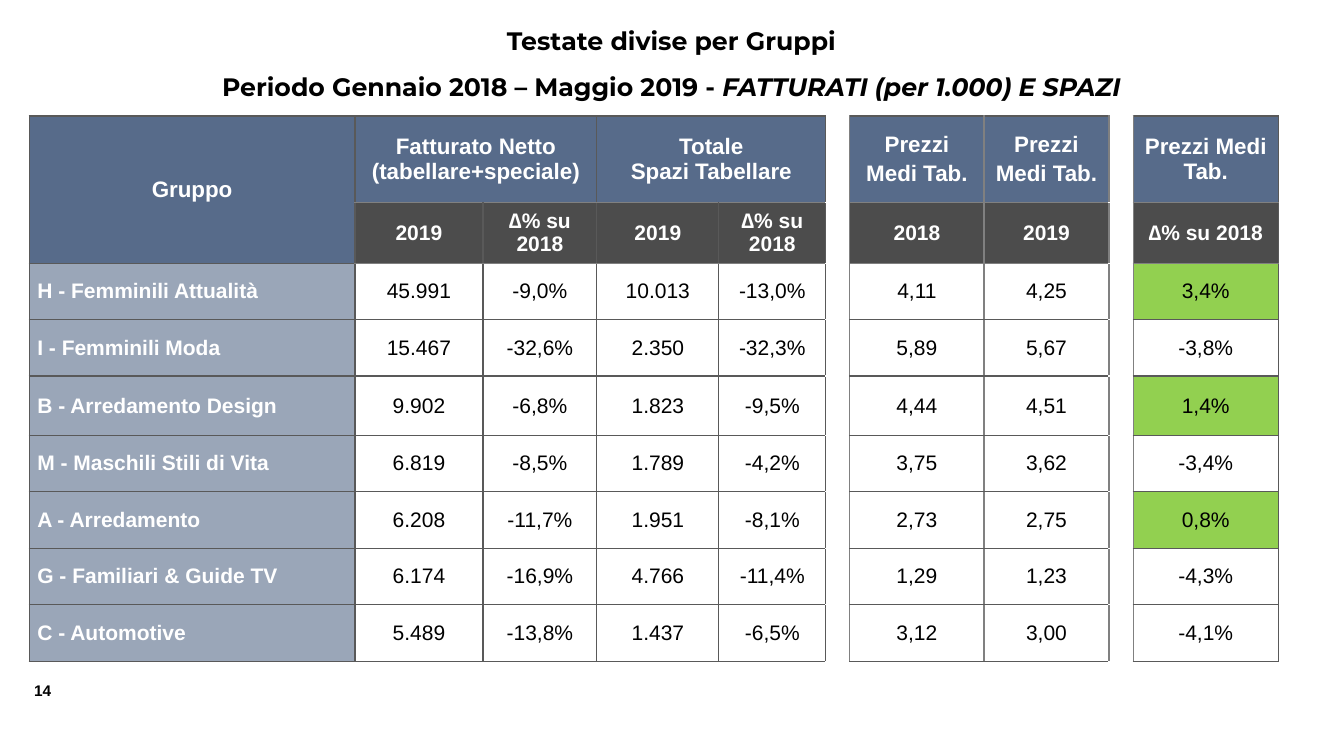
from lxml import etree
from pptx import Presentation
from pptx.dml.color import RGBColor
from pptx.enum.text import MSO_ANCHOR, PP_ALIGN
from pptx.oxml.ns import qn
from pptx.util import Inches, Pt

MIDDLE, TOP = MSO_ANCHOR.MIDDLE, MSO_ANCHOR.TOP
LEFT, CENTER = PP_ALIGN.LEFT, PP_ALIGN.CENTER

BLUE, BLACK, WHITE, GREEN = "576B8A", "000000", "FFFFFF", "92D050"
DARK, GRAY = "595959", "808080"

COLS = [3.23, 1.27, 1.13, 1.21, 1.06, 0.24, 1.33, 1.24, 0.24, 1.44]
ROWS = [0.86, 0.6, 0.56, 0.56, 0.59, 0.56, 0.56, 0.56, 0.56]
GAPS = (5, 8)
DELTA = "∆% su 2018"
HEADS = [
    ["Gruppo", "Fatturato Netto (tabellare+speciale)", "", "Totale\nSpazi Tabellare",
     "", "", "Prezzi\nMedi Tab.", "Prezzi\nMedi Tab.", "", "Prezzi Medi Tab."],
    ["", "2019", DELTA, "2019", DELTA, "", "2018", "2019", "", DELTA],
]
DATA = [
    ["H - Femminili Attualità", "45.991", "-9,0%", "10.013", "-13,0%", "4,11", "4,25", "3,4%"],
    ["I - Femminili Moda", "15.467", "-32,6%", "2.350", "-32,3%", "5,89", "5,67", "-3,8%"],
    ["B - Arredamento Design", "9.902", "-6,8%", "1.823", "-9,5%", "4,44", "4,51", "1,4%"],
    ["M - Maschili Stili di Vita", "6.819", "-8,5%", "1.789", "-4,2%", "3,75", "3,62", "-3,4%"],
    ["A - Arredamento", "6.208", "-11,7%", "1.951", "-8,1%", "2,73", "2,75", "0,8%"],
    ["G - Familiari & Guide TV", "6.174", "-16,9%", "4.766", "-11,4%", "1,29", "1,23", "-4,3%"],
    ["C - Automotive", "5.489", "-13,8%", "1.437", "-6,5%", "3,12", "3,00", "-4,1%"],
]


def rgb(color):
    return RGBColor.from_string(color)


def style(font, color, **form):
    for name, value in form.items():
        setattr(font, name, value)
    font.color.rgb = rgb(color)


def add_run(para, text, color, **form):
    run = para.add_run()
    run.text = text
    style(run.font, color, **form)


def add_box(slide, left, top, width, height, anchor, wrap):
    box = slide.shapes.add_textbox(Inches(left), Inches(top), Inches(width), Inches(height))
    frame = box.text_frame
    frame.word_wrap = wrap
    frame.vertical_anchor = anchor
    return frame


def add_title(slide):
    frame = add_box(slide, 1.11, 0.02, 11.1, 1.07, MIDDLE, True)
    lines = [
        [("Testate divise per Gruppi", False)],
        [("Periodo Gennaio 2018 – Maggio 2019 - ", False),
         ("FATTURATI (per 1.000) E SPAZI", True)],
    ]
    for num, line in enumerate(lines):
        para = frame.add_paragraph() if num else frame.paragraphs[0]
        para.alignment = CENTER
        para.line_spacing = 1.5
        for text, slant in line:
            add_run(para, text, BLACK, name="Montserrat", size=Pt(18), bold=True, italic=slant)


def paint(cell, color, alpha=100):
    cell.fill.solid()
    cell.fill.fore_color.rgb = rgb(color)
    if alpha < 100:
        tone = cell.fill._xPr.find(qn("a:solidFill"))[0]
        etree.SubElement(tone, qn("a:alpha"), val=str(alpha * 1000))


def rule(cell, edges):
    props = cell._tc.get_or_add_tcPr()
    for side, color in edges.items():
        line = etree.SubElement(props, qn("a:ln" + side), w=str(Pt(1)))
        fill = etree.SubElement(line, qn("a:solidFill"))
        etree.SubElement(fill, qn("a:srgbClr"), val=color)


def level(row, col):
    """Colour of the horizontal line above a row."""
    if col in GAPS:
        return WHITE
    return GRAY if row in (1, 2) and col else DARK


def upright(col):
    """Colour of the vertical line left of a column."""
    return GRAY if 6 <= col <= 9 else DARK


def look(row, col, text):
    """Fill colour, opacity, text colour and size of a cell."""
    if col in GAPS:
        return WHITE, 100, BLACK, 15
    if row == 0 or (row == 1 and col == 0):
        return BLUE, 100, WHITE, 16
    if row == 1:
        return BLACK, 70, WHITE, 15
    if col == 0:
        return BLUE, 60, WHITE, 15
    rise = col == 9 and not text.startswith("-")
    return GREEN if rise else WHITE, 100, BLACK, 15


def fill_cell(cell, row, col, text):
    rule(cell, {"L": upright(col), "R": upright(col + 1),
                "T": level(row, col), "B": level(row + 1, col)})
    back, alpha, ink, size = look(row, col, text)
    paint(cell, back, alpha)
    head = row < 2
    side, edge = (0.1, 0.05) if head else (0.0, 0.0)
    form = {
        "vertical_anchor": MIDDLE,
        "margin_left": Inches(0.08 if col == 0 and not head else side),
        "margin_right": Inches(side),
        "margin_top": Inches(edge),
        "margin_bottom": Inches(edge),
    }
    for name, value in form.items():
        setattr(cell, name, value)
    if not text:
        return
    for num, line in enumerate(text.split("\n")):
        para = cell.text_frame.add_paragraph() if num else cell.text_frame.paragraphs[0]
        para.alignment = LEFT if col == 0 and not head else CENTER
        if num and col > 5:
            para.space_before = Pt(3)
        add_run(para, line, ink, name="Arial", size=Pt(size), bold=ink == WHITE)


def add_grid(slide):
    grid = slide.shapes.add_table(len(ROWS), len(COLS), Inches(0.29), Inches(1.15),
                                  Inches(sum(COLS)), Inches(sum(ROWS))).table
    grid.first_row = grid.horz_banding = False
    for col, width in zip(grid.columns, COLS):
        col.width = Inches(width)
    for row, height in zip(grid.rows, ROWS):
        row.height = Inches(height)

    # Blank gap columns split the data into three blocks
    body = [line[:5] + [""] + line[5:7] + [""] + line[7:] for line in DATA]
    for row, line in enumerate(HEADS + body):
        for col, text in enumerate(line):
            fill_cell(grid.cell(row, col), row, col, text)

    # Joined headings
    for first, last in [((0, 0), (1, 0)), ((0, 1), (0, 2)), ((0, 3), (0, 4))]:
        grid.cell(*first).merge(grid.cell(*last))


def add_page(slide):
    frame = add_box(slide, 0.24, 6.71, 0.42, 0.29, TOP, False)
    add_run(frame.paragraphs[0], "14", BLACK, name="Arial", size=Pt(11), bold=True)


def main():
    deck = Presentation()
    deck.slide_width, deck.slide_height = Inches(13.33), Inches(7.5)
    slide = deck.slides.add_slide(deck.slide_layouts[6])
    add_title(slide)
    add_grid(slide)
    add_page(slide)
    deck.save("out.pptx")


if __name__ == "__main__":
    main()
